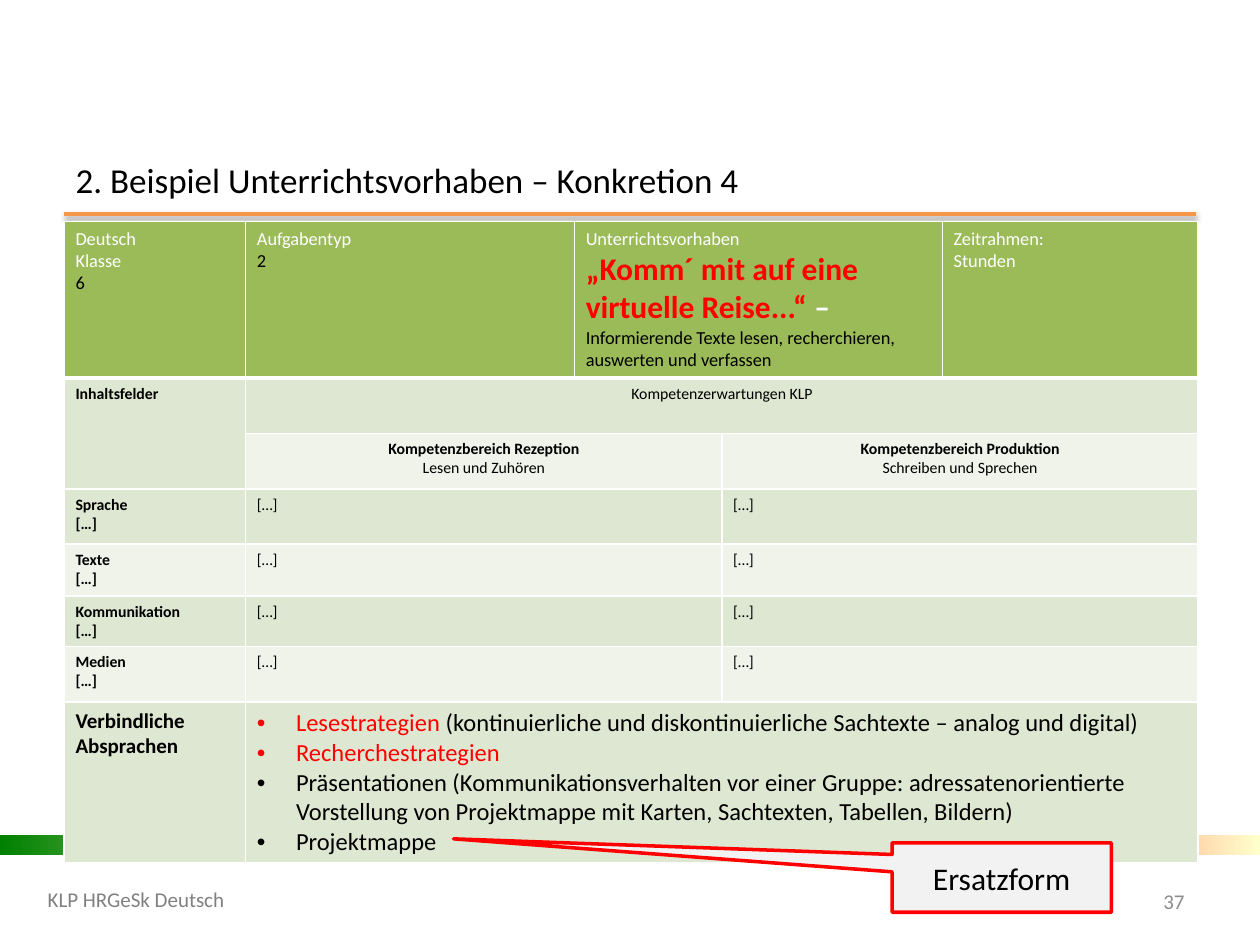
"""Builds the slide on lesson plan example 4 with its competence table."""
from lxml import etree
from pptx import Presentation
from pptx.dml.color import RGBColor
from pptx.enum import shapes, text
from pptx.oxml import parse_xml
from pptx.oxml.ns import nsdecls, qn
from pptx.util import Inches, Pt

COLORS = {
    "black": "000000", "white": "FFFFFF", "red": "FF0000", "orange": "F79646",
    "footer": "808080", "number": "8C8C8C", "head": "9BBB59", "dark": "DEE7D1",
    "light": "EFF3EA", "callout": "F2F2F2", "green": "008000", "cream": "FFFFCC",
}
FONT = "Calibri"
LEFT, CENTER, RIGHT = (text.PP_ALIGN.LEFT, text.PP_ALIGN.CENTER, text.PP_ALIGN.RIGHT)

TITLE = "2. Beispiel Unterrichtsvorhaben – Konkretion 4"
BARS = [(0, "green", "cream"), (3.38, "footer", "cream"), (6.73, "red", "cream")]
LABELS = [
    ("KLP HRGeSk Deutsch", (0.28, 6.94, 3.31, 0.4), LEFT, "footer"),
    ("37", (8.86, 6.95, 0.64, 0.4), RIGHT, "number"),
]

HEAD = {"size": 10.5, "color": "white"}
HEAD_DARK = {"size": 10.5}
SMALL = {"size": 9}
BOLD = {"size": 9, "bold": True}
LABEL = {"size": 12, "bold": True}
ITEM = {"size": 14}
ITEM_RED = {"size": 14, "color": "red"}
THEME = {"size": 18, "bold": True, "color": "red"}
DASH = {"size": 18, "bold": True, "color": "white"}
BREAK = None

COLS = [1.44, 2.61, 1.17, 1.75, 2.03]
ROWS = [(1.24, "head"), (0.44, "dark"), (0.44, "light"), (0.44, "dark"),
        (0.41, "light"), (0.4, "dark"), (0.44, "light"), (1.28, "dark")]
# row, column, row span, column span, alignment, paragraphs of runs
CELLS = [
    (0, 0, 1, 1, LEFT, [[("Deutsch", HEAD)], [("Klasse", HEAD)], [("6", HEAD_DARK)]]),
    (0, 1, 1, 1, LEFT, [[("Aufgabentyp", HEAD)], [("2", HEAD_DARK)]]),
    (0, 2, 1, 2, LEFT, [
        [("Unterrichtsvorhaben", HEAD)],
        [("„Komm´ mit auf eine virtuelle Reise...“ ", THEME), ("–", DASH), BREAK,
         ("Informierende Texte lesen, recherchieren, auswerten und verfassen", HEAD_DARK)]]),
    (0, 4, 1, 1, LEFT, [[("Zeitrahmen:", HEAD)], [("Stunden", HEAD)]]),
    (1, 0, 2, 1, LEFT, [[("Inhaltsfelder", BOLD)]]),
    (1, 1, 1, 4, CENTER, [[("Kompetenzerwartungen KLP", SMALL)]]),
    (2, 1, 1, 2, CENTER, [[("Kompetenzbereich Rezeption", BOLD)], [("Lesen und Zuhören", SMALL)]]),
    (2, 3, 1, 2, CENTER, [[("Kompetenzbereich Produktion", BOLD)], [("Schreiben und Sprechen", SMALL)]]),
    (7, 0, 1, 1, LEFT, [[("Verbindliche", LABEL)], [("Absprachen", LABEL)]]),
    (7, 1, 1, 4, LEFT, [
        [("Lesestrategien ", ITEM_RED),
         ("(kontinuierliche und diskontinuierliche Sachtexte – analog und digital)", ITEM)],
        [("Recherchestrategien", ITEM_RED)],
        [("Präsentationen (Kommunikationsverhalten vor einer Gruppe: adressatenorientierte "
          "Vorstellung von Projektmappe mit Karten, Sachtexten, Tabellen, Bildern)", ITEM)],
        [("Projektmappe", ITEM)]]),
]
for row, field in enumerate(["Sprache", "Texte", "Kommunikation", "Medien"], 3):
    CELLS.append((row, 0, 1, 1, LEFT, [[(field, BOLD)], [("[…]", BOLD)]]))
    CELLS += [(row, col, 1, 2, LEFT, [[("[…]", SMALL)]]) for col in (1, 3)]


def rgb(name):
    return RGBColor.from_string(COLORS[name])


def box(*lengths):
    return [Inches(v) for v in lengths]


def add_run(p, words, size, color="black", bold=False):
    r = p.add_run()
    r.text = words
    for key, value in {"name": FONT, "size": Pt(size), "bold": bold}.items():
        setattr(r.font, key, value)
    r.font.color.rgb = rgb(color)


def set_text(tf, words, align, size, color="black"):
    for key, value in {"word_wrap": True, "vertical_anchor": text.MSO_ANCHOR.MIDDLE}.items():
        setattr(tf, key, value)
    p = tf.paragraphs[0]
    p.alignment = align
    add_run(p, words, size, color)


def add_bullet(p, color):
    ppr = p._p.get_or_add_pPr()
    ppr.set("marL", str(Inches(0.31)))
    ppr.set("indent", str(-Inches(0.31)))
    clr = etree.SubElement(ppr, qn("a:buClr"))
    etree.SubElement(clr, qn("a:srgbClr"), val=COLORS[color])
    etree.SubElement(ppr, qn("a:buFont"), typeface="Arial")
    etree.SubElement(ppr, qn("a:buChar"), char="•")


def add_borders(cell, bottom):
    tcpr = cell._tc.get_or_add_tcPr()
    for i, (side, width) in enumerate([("L", 1), ("R", 1), ("T", 1), ("B", bottom)]):
        tcpr.insert(i, parse_xml(
            f'<a:ln{side} {nsdecls("a")} w="{Pt(width)}"><a:solidFill>'
            f'<a:srgbClr val="{COLORS["white"]}"/></a:solidFill></a:ln{side}>'))


def add_rule(s):
    rule = s.shapes.add_connector(shapes.MSO_CONNECTOR.STRAIGHT, *box(0.51, 1.7, 9.49, 1.7))
    rule.line.color.rgb = rgb("orange")
    rule.line.width = Pt(2)
    rule._element.spPr.append(parse_xml(
        f'<a:effectLst {nsdecls("a")}><a:outerShdw blurRad="{Pt(3.1)}" dist="{Pt(1.6)}" '
        f'dir="5400000" rotWithShape="0"><a:srgbClr val="{COLORS["black"]}">'
        '<a:alpha val="38000"/></a:srgbClr></a:outerShdw></a:effectLst>'))


def add_bars(s):
    for left, start, end in BARS:
        sp = s.shapes.add_shape(shapes.MSO_SHAPE.RECTANGLE, *box(left, 6.63, 3.27, 0.16))
        sp.shadow.inherit = False
        sp.line.fill.background()
        sp.fill.gradient()
        sp.fill.gradient_angle = 0
        for stop, name in zip(sp.fill.gradient_stops, (start, end)):
            stop.color.rgb = rgb(name)


def add_plan(s):
    height = sum(h for h, _ in ROWS)
    table = s.shapes.add_table(len(ROWS), len(COLS), *box(0.51, 1.76, sum(COLS), height)).table
    for key in ("first_row", "horz_banding"):
        setattr(table, key, False)
    for column, width in zip(table.columns, COLS):
        column.width = Inches(width)
    for i, (h, fill) in enumerate(ROWS):
        table.rows[i].height = Inches(h)
        for cell in table.rows[i].cells:
            cell.fill.solid()
            cell.fill.fore_color.rgb = rgb(fill)
            add_borders(cell, 3 if fill == "head" else 1)
    for row, col, down, across, align, paras in CELLS:
        cell = table.cell(row, col)
        if down * across > 1:
            cell.merge(table.cell(row + down - 1, col + across - 1))
        cell.margin_left = cell.margin_right = Inches(0.09)
        tf = cell.text_frame
        for i, runs in enumerate(paras):
            p = tf.add_paragraph() if i else tf.paragraphs[0]
            p.alignment = align
            if (row, col) == (7, 1):
                add_bullet(p, runs[0][1].get("color", "black"))
            for run in runs:
                if run is BREAK:
                    p.add_line_break()
                else:
                    add_run(p, run[0], **run[1])


def add_callout(s):
    sp = s.shapes.add_shape(shapes.MSO_SHAPE.RECTANGULAR_CALLOUT, *box(7.08, 6.69, 1.74, 0.55))
    sp.shadow.inherit = False
    sp.adjustments[0], sp.adjustments[1] = -2.5, -0.56
    sp.fill.solid()
    sp.fill.fore_color.rgb = rgb("callout")
    sp.line.color.rgb = rgb("red")
    sp.line.width = Pt(2)
    set_text(sp.text_frame, "Ersatzform", CENTER, 18)


def main():
    prs = Presentation()
    prs.slide_width, prs.slide_height = box(10, 7.5)
    s = prs.slides.add_slide(prs.slide_layouts[5])
    title = s.shapes.title
    for key, value in zip(("left", "top", "width", "height"), box(0.5, 1.23, 9, 0.39)):
        setattr(title, key, value)
    set_text(title.text_frame, TITLE, LEFT, 20)
    add_rule(s)
    add_bars(s)
    for words, place, align, color in LABELS:
        set_text(s.shapes.add_textbox(*box(*place)).text_frame, words, align, 12, color)
    add_plan(s)
    add_callout(s)
    prs.save("out.pptx")


if __name__ == "__main__":
    main()
